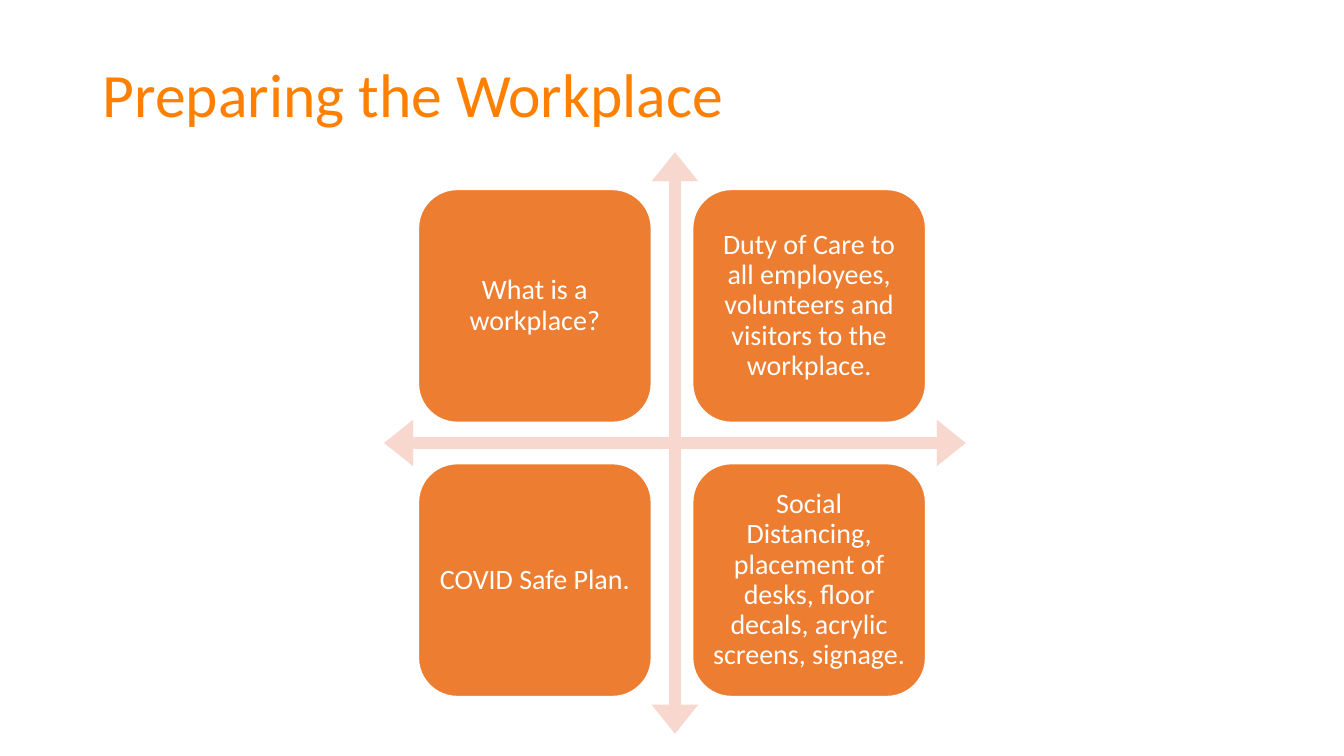
from pptx import Presentation
from pptx.dml.color import RGBColor
from pptx.enum import shapes, text
from pptx.util import Inches, Pt

COLORS = {"title": "FF7F00", "tile": "ED7D31", "arrow": "F8D7CE", "white": "FFFFFF"}
FONT = "Calibri"
TILE = 2.31
LEFT, TOP = 4.15, 1.88
STEP = 2.72
TILES = [
    "What is a workplace?",
    "Duty of Care to all employees, volunteers and visitors to the workplace.",
    "COVID Safe Plan.",
    "Social Distancing, placement of desks, floor decals, acrylic screens, signage.",
]


def color(name):
    return RGBColor.from_string(COLORS[name])


def set_text(shape, words, size, tint, align):
    frame = shape.text_frame
    frame.text = words
    frame.word_wrap = True
    frame.auto_size = text.MSO_AUTO_SIZE.NONE
    frame.vertical_anchor = text.MSO_ANCHOR.MIDDLE
    para = frame.paragraphs[0]
    para.alignment = align
    para.line_spacing = 0.9
    font = para.runs[0].font
    font.name, font.size = FONT, Pt(size)
    font.color.rgb = color(tint)


def add_title(slide, words):
    title = slide.shapes.title
    title.left, title.top = Inches(0.92), Inches(0.4)
    title.width, title.height = Inches(11.5), Inches(1.14)
    set_text(title, words, 44, "title", text.PP_ALIGN.LEFT)


def add_filled(slide, kind, left, top, size, fill):
    """Add a square preset shape with a plain fill and no shadow."""
    shape = slide.shapes.add_shape(
        kind, Inches(left), Inches(top), Inches(size), Inches(size))
    shape.shadow.inherit = False
    shape.fill.solid()
    shape.fill.fore_color.rgb = color(fill)
    return shape


def add_cross(slide):
    cross = add_filled(slide, shapes.MSO_SHAPE.QUAD_ARROW, 3.81, 1.51, 5.77, "arrow")
    cross.line.fill.background()
    for i, value in enumerate((0.02, 0.04, 0.05)):
        cross.adjustments[i] = value


def add_tile(slide, left, top, words):
    tile = add_filled(
        slide, shapes.MSO_SHAPE.ROUNDED_RECTANGLE, left, top, TILE, "tile")
    tile.line.color.rgb = color("white")
    tile.line.width = Pt(1)
    frame = tile.text_frame
    frame.margin_left = frame.margin_right = Inches(0.08)
    frame.margin_top = frame.margin_bottom = Inches(0.08)
    set_text(tile, words, 20, "white", text.PP_ALIGN.CENTER)


def main():
    deck = Presentation()
    deck.slide_width, deck.slide_height = Inches(13.33), Inches(7.5)
    slide = deck.slides.add_slide(deck.slide_layouts.get_by_name("Title Only"))
    add_title(slide, "Preparing the Workplace")
    add_cross(slide)
    for i, words in enumerate(TILES):
        row, col = divmod(i, 2)
        add_tile(slide, LEFT + col * STEP, TOP + row * STEP, words)
    deck.save("out.pptx")


if __name__ == "__main__":
    main()
